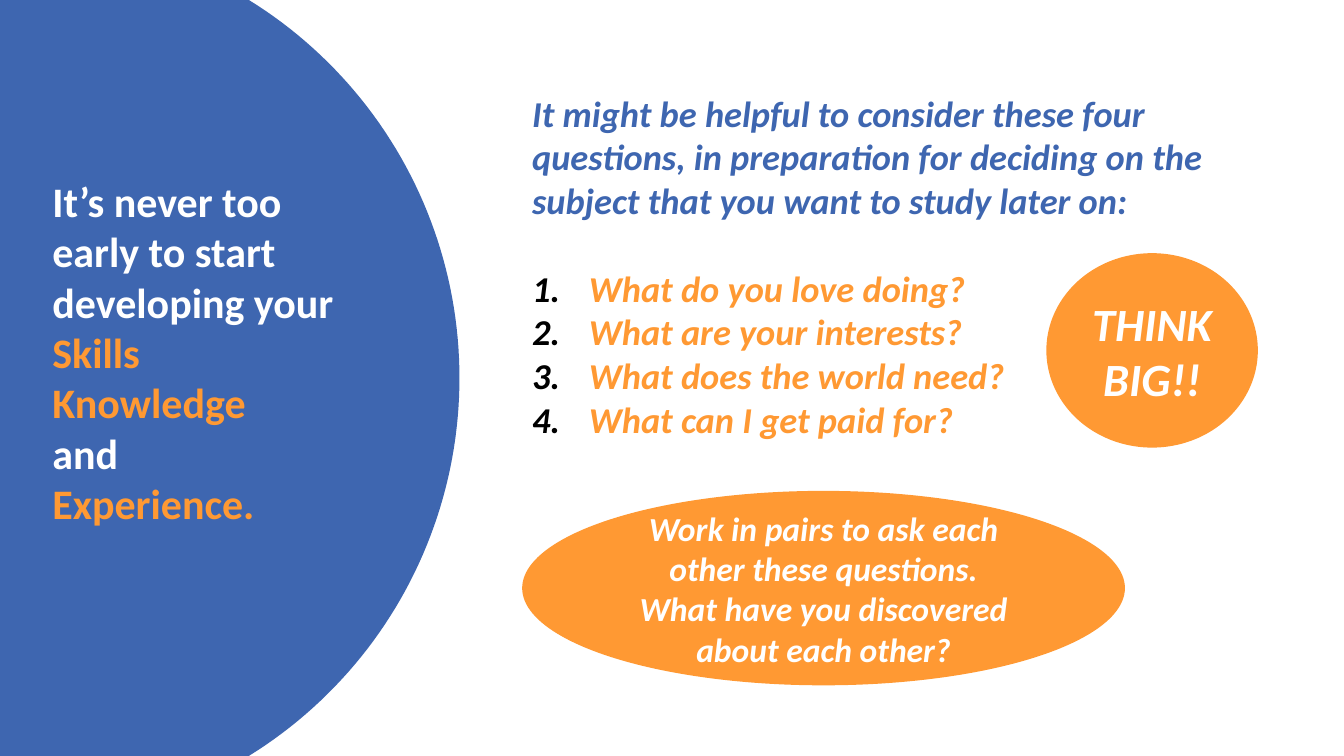
import math

from lxml import etree
from pptx import Presentation
from pptx import util as u
from pptx.dml.color import RGBColor
from pptx.enum import shapes, text
from pptx.oxml.ns import qn

COLOURS = {"blue": "3E66B0", "orange": "FF9933", "white": "FFFFFF", "black": "000000"}
Cm, Pt = u.Cm, u.Pt
W, H = 33.87, 19.05


def rgb(name):
    return RGBColor.from_string(COLOURS[name])


def write(p, words, size=26, colour="white", italic=True, align=text.PP_ALIGN.LEFT,
          before=0, font="Calibri"):
    """Fill one paragraph with a formatted run."""
    p.alignment, p.line_spacing = align, 1.0
    p.space_before, p.space_after = Pt(before), Pt(0)
    r = p.add_run()
    r.text = words
    f = r.font
    f.name, f.size, f.bold, f.italic = font, Pt(size), True, italic
    f.color.rgb = rgb(colour)


class Deck:
    def __init__(self):
        self.prs = Presentation()
        self.prs.slide_width, self.prs.slide_height = Cm(W), Cm(H)
        self.s = self.prs.slides.add_slide(self.prs.slide_layouts[5])

    def paint(self, sp, colour):
        sp.shadow.inherit = False
        sp.fill.solid()
        sp.fill.fore_color.rgb = rgb(colour)
        sp.line.fill.background()

    def paragraphs(self, sp, lines, anchor=text.MSO_ANCHOR.TOP):
        """Write (words, format) pairs, one paragraph each."""
        tf = sp.text_frame
        tf.word_wrap, tf.vertical_anchor = True, anchor
        tf.auto_size = text.MSO_AUTO_SIZE.NONE
        tf.margin_left = tf.margin_right = Cm(0.25)
        tf.margin_top = tf.margin_bottom = Cm(0.13)
        for i, (words, style) in enumerate(lines):
            write(tf.paragraphs[0] if i == 0 else tf.add_paragraph(), words, **style)
        return tf.paragraphs

    def arc_panel(self, cx, radius, colour, steps=90):
        """Left panel whose right edge is an arc centred on the slide's mid height."""
        cy = H / 2
        half = math.asin(cy / radius)
        angles = [half * (2 * i / steps - 1) for i in range(steps + 1)]
        arc = [(Cm(cx + radius * math.cos(a)), Cm(cy + radius * math.sin(a)))
               for a in angles]
        fb = self.s.shapes.build_freeform(0, 0)
        fb.add_line_segments(arc + [(0, Cm(H))], close=True)
        sp = fb.convert_to_shape()
        self.paint(sp, colour)
        self.s.shapes.title.element.addprevious(sp.element)

    def title(self, x, y, w, h, lines):
        sp = self.s.shapes.title
        sp.left, sp.top, sp.width, sp.height = Cm(x), Cm(y), Cm(w), Cm(h)
        self.paragraphs(sp, lines)

    def textbox(self, x, y, w, h, lines):
        sp = self.s.shapes.add_textbox(Cm(x), Cm(y), Cm(w), Cm(h))
        return self.paragraphs(sp, lines)

    def number(self, p, indent, colour):
        pPr = p._p.get_or_add_pPr()
        pPr.set("marL", str(Cm(indent)))
        pPr.set("indent", str(-Cm(indent)))
        clr = etree.SubElement(pPr, qn("a:buClr"))
        etree.SubElement(clr, qn("a:srgbClr"), val=COLOURS[colour])
        etree.SubElement(pPr, qn("a:buFont"), typeface="Calibri")
        etree.SubElement(pPr, qn("a:buAutoNum"), type="arabicPeriod")

    def ellipse(self, x, y, w, h, lines, size):
        sp = self.s.shapes.add_shape(shapes.MSO_SHAPE.OVAL, Cm(x), Cm(y), Cm(w), Cm(h))
        self.paint(sp, "orange")
        style = {"size": size, "align": text.PP_ALIGN.CENTER}
        self.paragraphs(sp, [(line, style) for line in lines], text.MSO_ANCHOR.MIDDLE)


def main():
    deck = Deck()

    # Blue panel and its statement
    deck.arc_panel(0.38, 11.2, "blue")
    statement = [("It’s never too early to start developing your", "white"),
                 ("Skills", "orange"), ("Knowledge", "orange"),
                 ("and", "white"), ("Experience.", "orange")]
    deck.title(1.07, 4.29, 8.05, 10.52,
               [(words, {"size": 30, "colour": c, "italic": False})
                for words, c in statement])

    # Introduction and numbered questions
    intro = ("It might be helpful to consider these four questions, in preparation "
             "for deciding on the subject that you want to study later on:")
    questions = ["What do you love doing?", "What are your interests?",
                 "What does the world need?", "What can I get paid for?"]
    lines = [(intro, {"colour": "blue"})]
    lines += [(q, {"colour": "orange", "before": 0 if i else 31.5})
              for i, q in enumerate(questions)]
    for p in deck.textbox(13.16, 2.16, 19.63, 9.4, lines)[1:]:
        deck.number(p, 1.43, "black")

    # Orange call-outs
    deck.ellipse(26.37, 6.38, 5.33, 4.9, ["THINK BIG!!"], 33)
    deck.ellipse(13.16, 12.37, 15.19, 4.9,
                 ["Work in pairs to ask each other these questions.",
                  "What have you discovered about each other?"], 24)

    deck.prs.save("out.pptx")


if __name__ == "__main__":
    main()
